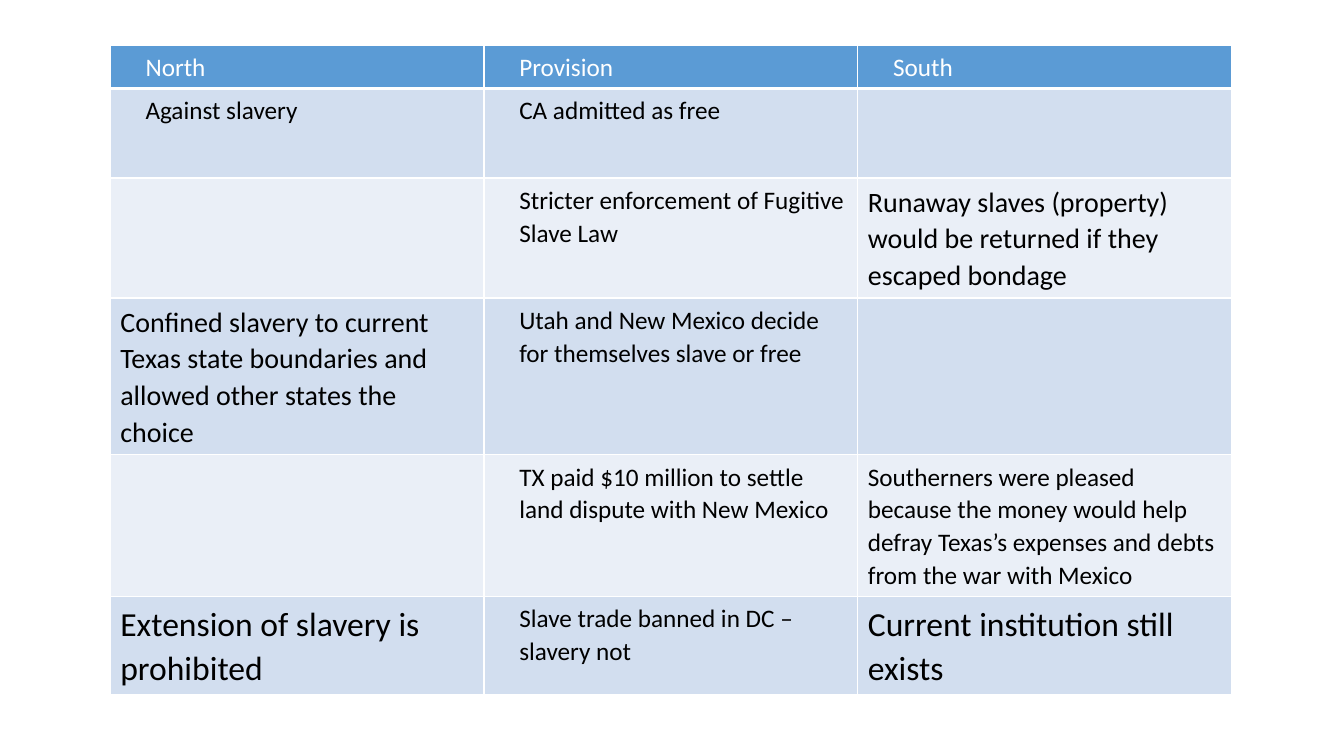
import pptx
import pptx.dml.color
import pptx.oxml.ns
import pptx.util
from lxml import etree

Pt = pptx.util.Pt
RGBColor = pptx.dml.color.RGBColor

WHITE = RGBColor(0xFF, 0xFF, 0xFF)
BLACK = RGBColor(0x00, 0x00, 0x00)
HEADER_BLUE = RGBColor(0x5B, 0x9B, 0xD5)
BAND_DARK = RGBColor(0xD2, 0xDE, 0xEF)
BAND_LIGHT = RGBColor(0xEA, 0xEF, 0xF7)

FONT = "Calibri"
BASE_SIZE = 18
INDENT = Pt(18)

# Each cell is (text, size, indented), or None when empty.
ROWS = [
    [("North", 18, True), ("Provision", 18, True), ("South", 18, True)],
    [("Against slavery", 18, True), ("CA admitted as free", 18, True), None],
    [None,
     ("Stricter enforcement of Fugitive Slave Law", 18, True),
     ("Runaway slaves (property) would be returned if they escaped bondage", 20, False)],
    [("Confined slavery to current Texas state boundaries and allowed other states the choice",
      20, False),
     ("Utah and New Mexico decide for themselves slave or free", 18, True),
     None],
    [None,
     ("TX paid $10 million to settle land dispute with New Mexico", 18, True),
     ("Southerners were pleased because the money would help defray Texas’s expenses "
      "and debts from the war with Mexico", 18, False)],
    [("Extension of slavery is prohibited", 24, False),
     ("Slave trade banned in DC – slavery not", 18, True),
     ("Current institution still exists", 24, False)],
]
ROW_HEIGHTS = [30.5, 64, 85.5, 112, 101, 69]


def set_borders(cell, bottom_width):
    """Draw white borders; call before the fill, which must follow them in the XML."""
    properties = cell._tc.get_or_add_tcPr()
    for side, width in (("L", 1), ("R", 1), ("T", 1), ("B", bottom_width)):
        line = etree.SubElement(properties, pptx.oxml.ns.qn(f"a:ln{side}"), w=str(Pt(width)))
        fill = etree.SubElement(line, pptx.oxml.ns.qn("a:solidFill"))
        etree.SubElement(fill, pptx.oxml.ns.qn("a:srgbClr"), val=str(WHITE))


def write_cell(cell, content, color):
    paragraph = cell.text_frame.paragraphs[0]
    paragraph.font.size = Pt(BASE_SIZE)
    if content is None:
        return
    text, size, indented = content
    paragraph.line_spacing = 1.07
    if indented:
        paragraph.space_after = Pt(8)
        paragraph._p.get_or_add_pPr().set("marL", str(INDENT))
    run = paragraph.add_run()
    run.text = text
    run.font.name = FONT
    run.font.size = Pt(size)
    run.font.bold = False
    run.font.color.rgb = color


def add_compromise_table(slide, left, top, width):
    column_count = len(ROWS[0])
    frame = slide.shapes.add_table(len(ROWS), column_count, left, top, width,
                                   Pt(sum(ROW_HEIGHTS)))
    table = frame.table
    for column in table.columns:
        column.width = width // column_count
    for row_index, contents in enumerate(ROWS):
        table.rows[row_index].height = Pt(ROW_HEIGHTS[row_index])
        is_header = row_index == 0
        band = BAND_DARK if row_index % 2 else BAND_LIGHT
        for column_index, content in enumerate(contents):
            cell = table.cell(row_index, column_index)
            set_borders(cell, 3 if is_header else 1)
            cell.fill.solid()
            cell.fill.fore_color.rgb = HEADER_BLUE if is_header else band
            write_cell(cell, content, WHITE if is_header else BLACK)


def main():
    presentation = pptx.Presentation()
    presentation.slide_width = Pt(960)
    presentation.slide_height = Pt(540)
    slide = presentation.slides.add_slide(presentation.slide_layouts[6])
    add_compromise_table(slide, Pt(78.75), Pt(32.4), Pt(801))
    presentation.save("out.pptx")


if __name__ == "__main__":
    main()
